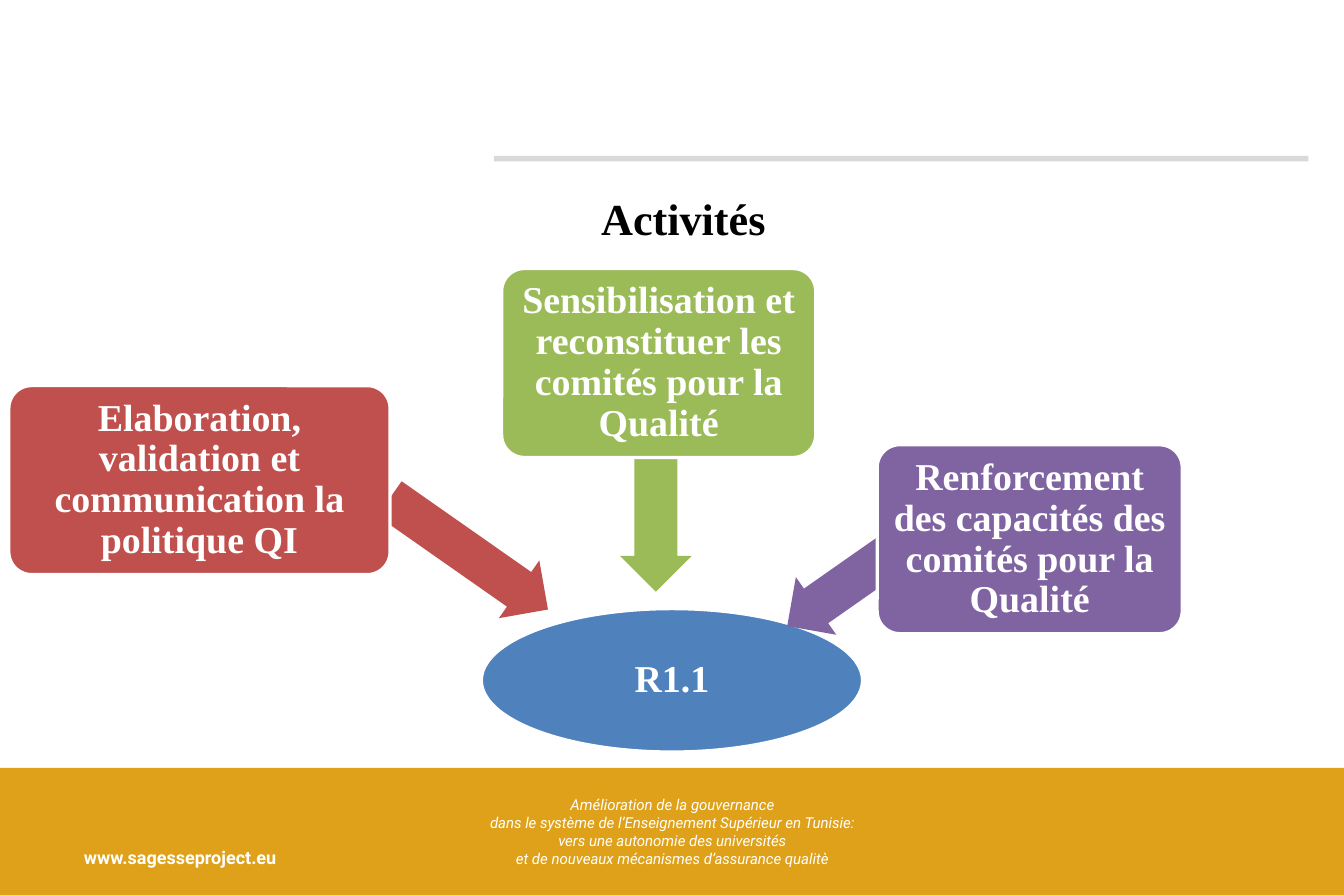
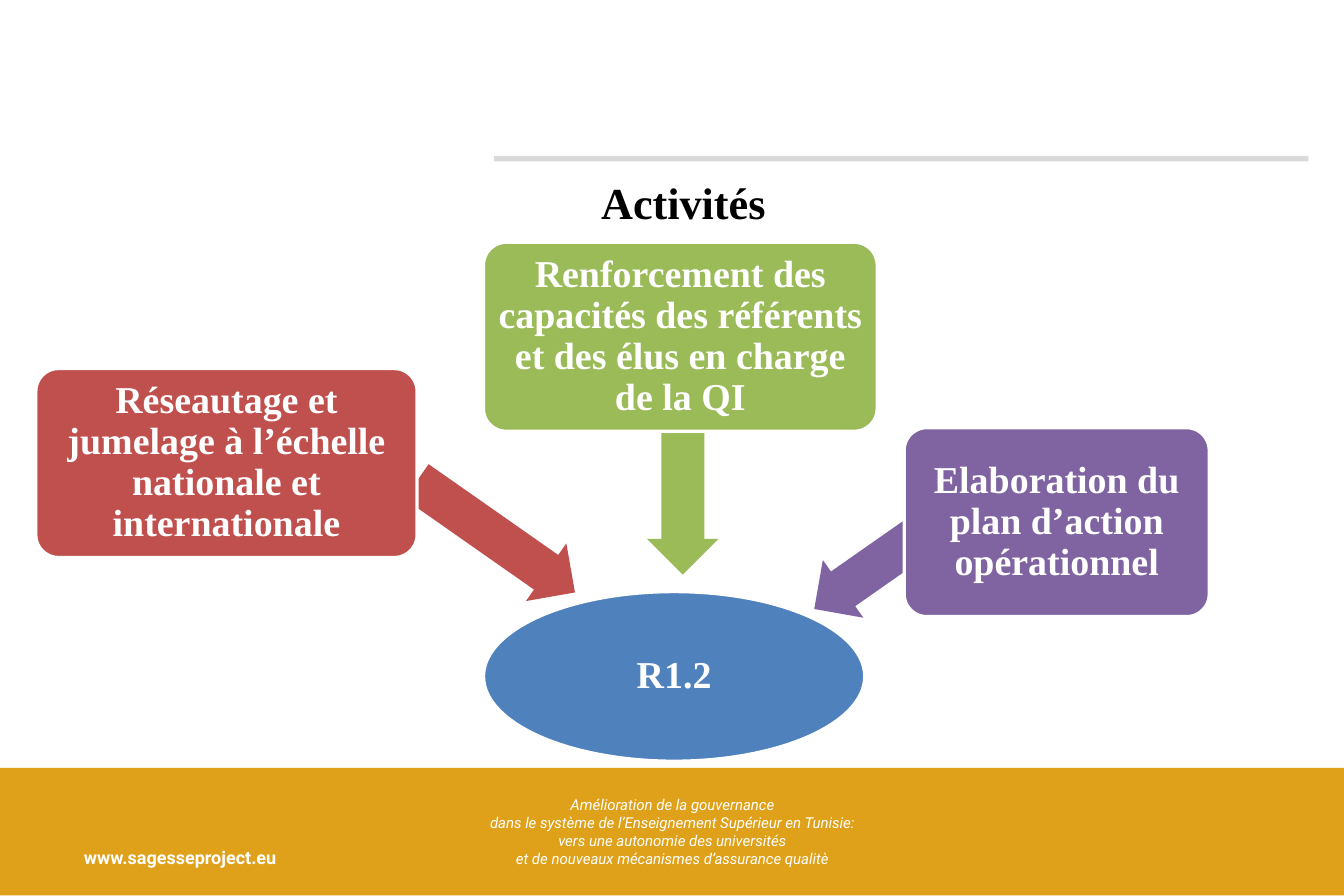
from pptx import Presentation
from pptx.dml.color import RGBColor
from pptx.enum.shapes import MSO_SHAPE as Shape
from pptx.enum.text import MSO_ANCHOR as Anchor, PP_ALIGN as Align
from pptx.util import Pt

COLOURS = {
    "band": "DFA119", "rule": "D9D9D9", "white": "FFFFFF", "black": "000000",
    "result": "4F81BD", "left": "C0504D", "middle": "9BBB59", "right": "8064A2",
}
SERIF, SANS = "Times New Roman", "Roboto"
PAGE_WIDTH, PAGE_HEIGHT = 850.5, 567
BAND_TOP, BAND_HEIGHT = 486, 80.6

TAGLINE = [
    "Amélioration de la gouvernance",
    "dans le système de l’Enseignement Supérieur en Tunisie:",
    "vers une autonomie des universités",
    "et de nouveaux mécanismes d’assurance qualitè",
]
WEBSITE = "www.sagesseproject.eu"

CARD_HEIGHT = 119.5
RESULT_WIDTH = 241.2

# Offsets inside the diagram: (left, top, width, height, rotation)
ARROWS = {
    "left": (229.8, 158.3, 122.4, 44.6, 215),
    "middle": (348.6, 120.9, 121.7, 45.4, 270),
    "right": (478.2, 158.3, 159.1, 44.6, 325),
}

SLIDES = [
    {
        "title_top": 117.3,
        "origin": (5.6, 170),
        "result": ("R1.1", 299, 90.7),
        "middle_card": (311.9, 0, 198.7),
        "activities": {
            "left": "Elaboration, validation et communication la politique QI",
            "middle": "Sensibilisation et reconstituer les comités pour la Qualité",
            "right": "Renforcement des capacités des comités pour la Qualité",
        },
    },
    {
        "title_top": 107.7,
        "origin": (22.7, 159.2),
        "result": ("R1.2", 283.3, 107.3),
        "middle_card": (283.3, -5.8, 249.1),
        "activities": {
            "left": "Réseautage et jumelage à l’échelle nationale et internationale",
            "middle": "Renforcement des capacités des référents et des élus en charge de la QI",
            "right": "Elaboration du plan d’action opérationnel",
        },
    },
]


def rgb(name):
    return RGBColor.from_string(COLOURS[name])


def add_filled(page, kind, box, colour, outlined=False):
    shape = page.shapes.add_shape(kind, *map(Pt, box))
    shape.shadow.inherit = False
    shape.fill.solid()
    shape.fill.fore_color.rgb = rgb(colour)
    if outlined:
        shape.line.color.rgb = rgb("white")
        shape.line.width = Pt(2)
    else:
        shape.line.fill.background()
    return shape


def write(frame, lines, font, size, colour="white", align=Align.CENTER,
          bold=False, italic=False, spacing=None):
    frame.word_wrap = True
    for index, line in enumerate(lines):
        para = frame.add_paragraph() if index else frame.paragraphs[0]
        para.text = line
        para.alignment = align
        para.line_spacing = spacing
        para.font.name = font
        para.font.size = Pt(size)
        para.font.bold = bold
        para.font.italic = italic
        para.font.color.rgb = rgb(colour)


def add_text(page, box, lines, font, size, **style):
    frame = page.shapes.add_textbox(*map(Pt, box)).text_frame
    write(frame, lines, font, size, **style)


def add_label(shape, text, margin):
    """Centre a bold caption inside a card or the result ellipse."""
    frame = shape.text_frame
    frame.margin_left = frame.margin_right = Pt(margin)
    frame.margin_top = frame.margin_bottom = Pt(margin)
    frame.vertical_anchor = Anchor.MIDDLE
    write(frame, [text], SERIF, 24, bold=True, spacing=0.9)


def add_frame(page):
    """Draw the header rule and the footer band shared by all slides."""
    add_filled(page, Shape.RECTANGLE, (0, BAND_TOP, PAGE_WIDTH, BAND_HEIGHT), "band")
    add_text(page, (248.4, BAND_TOP + 13.7, 354.2, 53.3), TAGLINE, SANS, 9.5,
             italic=True)
    add_text(page, (46, BAND_TOP + 46, 159, 21), [WEBSITE], SANS, 11.4,
             align=Align.LEFT, bold=True)
    add_filled(page, Shape.RECTANGLE, (312.5, 98.6, 515.5, 3.6), "rule")


def add_title(page, top):
    add_text(page, (218.2, top, 428.4, 39.4), ["Activités"], SERIF, 28,
             colour="black", bold=True)


def add_diagram(page, origin, result, middle_card, activities):
    """Draw three activity cards whose arrows point at the result ellipse."""
    left, top = origin

    def place(x, y, width, height):
        return left + x, top + y, width, height

    name, result_left, result_height = result
    ellipse = add_filled(page, Shape.OVAL,
                         place(result_left, 215.2, RESULT_WIDTH, result_height),
                         "result", outlined=True)
    add_label(ellipse, name, 0)

    cards = {"left": (0, 74.1, 241.2), "middle": middle_card, "right": (549.5, 111.5, 193)}
    for side, activity in activities.items():
        *arrow_box, rotation = ARROWS[side]
        arrow = add_filled(page, Shape.LEFT_ARROW, place(*arrow_box), side)
        arrow.adjustments[0] = 0.6
        arrow.adjustments[1] = 0.5
        arrow.rotation = rotation

        card = add_filled(page, Shape.ROUNDED_RECTANGLE,
                          place(*cards[side], CARD_HEIGHT), side, outlined=True)
        card.adjustments[0] = 0.12
        add_label(card, activity, 3)


def main():
    deck = Presentation()
    deck.slide_width, deck.slide_height = Pt(PAGE_WIDTH), Pt(PAGE_HEIGHT)
    for content in SLIDES:
        page = deck.slides.add_slide(deck.slide_layouts[6])
        add_frame(page)
        add_title(page, content["title_top"])
        add_diagram(page, content["origin"], content["result"],
                    content["middle_card"], content["activities"])
    deck.save("out.pptx")


if __name__ == "__main__":
    main()
